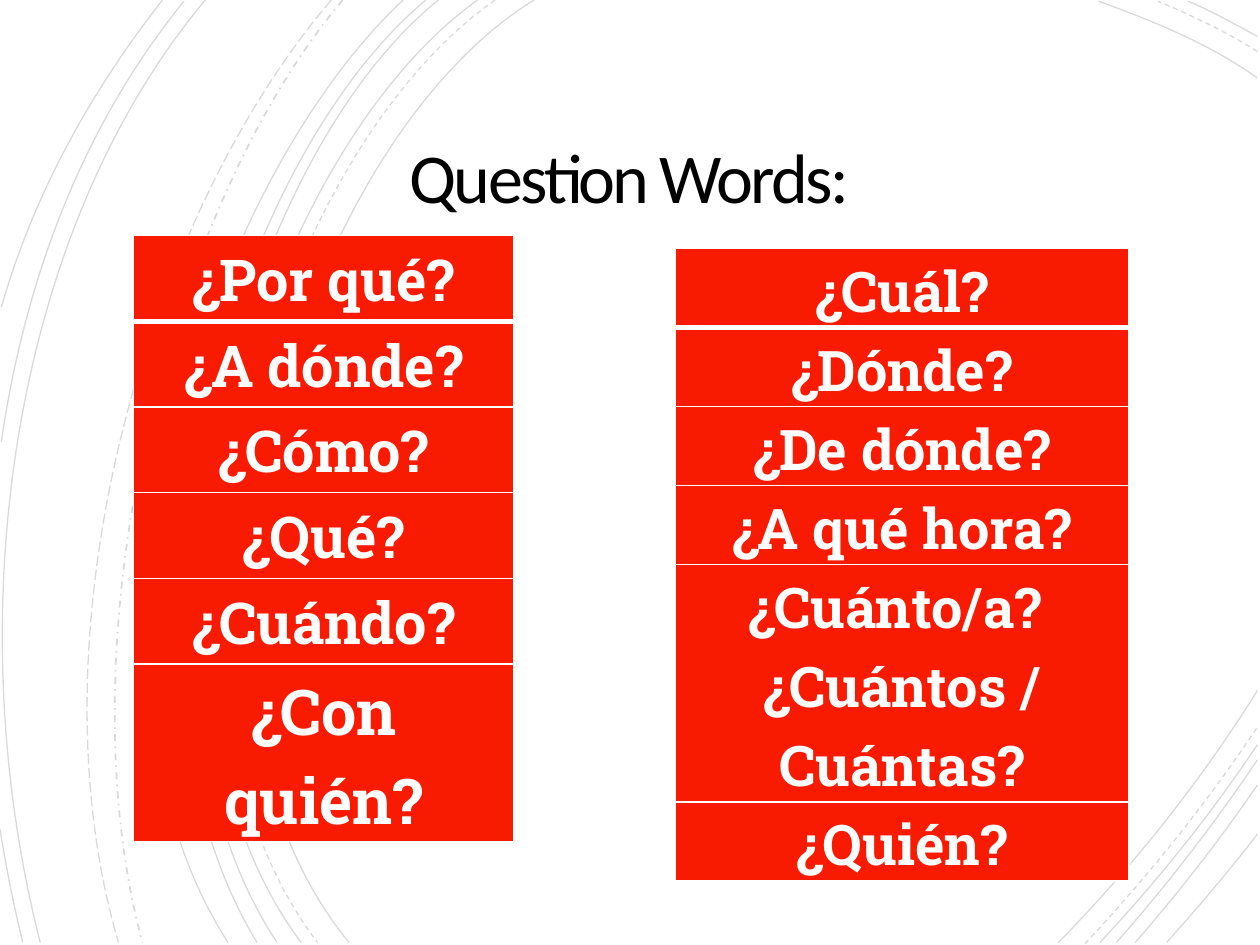
from dataclasses import dataclass

from lxml.etree import SubElement
from pptx import Presentation
from pptx.dml.color import RGBColor
from pptx.enum.dml import MSO_LINE
from pptx.enum.text import MSO_ANCHOR, MSO_AUTO_SIZE, PP_ALIGN
from pptx.oxml.ns import qn
from pptx.util import Inches, Pt


@dataclass(frozen=True)
class Theme:
    ink: RGBColor = RGBColor(0x00, 0x00, 0x00)
    paper: RGBColor = RGBColor(0xFF, 0xFF, 0xFF)
    red: RGBColor = RGBColor(0xF8, 0x1B, 0x02)
    title_font: str = "Calibri"
    word_font: str = "Roboto Slab"
    title_size: int = 40
    left_size: int = 33
    last_left_size: int = 36
    right_size: int = 32
    arc_opacity: int = 15


theme = Theme()


def draw_arc(slide, points, dash, weight):
    start, *rest = [(Inches(x), Inches(y)) for x, y in points]
    builder = slide.shapes.build_freeform(*start, scale=1.0)
    builder.add_line_segments(rest, close=False)
    arc = builder.convert_to_shape()
    arc.shadow.inherit = False
    arc.fill.background()
    arc.line.width = Pt(weight)
    arc.line.dash_style = dash
    arc.line.color.rgb = theme.ink
    ink = arc.line._ln.find(".//" + qn("a:srgbClr"))
    SubElement(ink, qn("a:alpha"), val=str(theme.arc_opacity * 1000))
    outline = next(arc._element.iter(qn("a:path")))
    curve = SubElement(outline, qn("a:cubicBezTo"))
    for segment in outline.findall(qn("a:lnTo")):
        curve.append(segment[0])
        outline.remove(segment)


def draw_borders(cell, first):
    sides = {"L": 1, "R": 1, "T": 1, "B": 3} if first else {"L": 1, "R": 1, "B": 1}
    properties = cell._tc.get_or_add_tcPr()
    for side, weight in sides.items():
        border = SubElement(properties, qn(f"a:ln{side}"), w=str(Pt(weight)))
        solid = SubElement(border, qn("a:solidFill"))
        SubElement(solid, qn("a:srgbClr"), val=str(theme.paper))


presentation = Presentation()
presentation.slide_width = Inches(10)
presentation.slide_height = Inches(7.5)
slide = presentation.slides.add_slide(presentation.slide_layouts[5])

arc_groups = [
    (MSO_LINE.SOLID, 0.75, [
        [(4.24, 0), (2.36, 1.15), (1.07, 5.4), (2.77, 7.48)],
        [(3.79, 0), (2.02, 1.27), (0.82, 5.37), (2.39, 7.48)],
        [(3.48, 0), (1.83, 1.33), (0.82, 5.41), (2.2, 7.48)],
        [(3.38, 0), (1.73, 1.38), (0.73, 5.33), (2.04, 7.48)],
        [(3.2, 0), (1.63, 1.47), (0.4, 5.29), (1.81, 7.48)],
        [(1.63, 0), (0.08, 1.85), (-0.34, 4.9), (0.32, 7.48)],
        [(1.46, 0.01), (0.69, 0.96), (0.21, 2.14), (0.01, 3.51)],
        [(1.29, 0), (0.75, 0.69), (0.28, 1.5), (0.01, 2.44)],
        [(0, 6.58), (0.05, 6.89), (0.11, 7.19), (0.18, 7.48)],
        [(9.98, 0.62), (9.59, 0.34), (9.13, 0.16), (8.72, 0.01)],
        [(9.98, 0.29), (9.8, 0.19), (9.62, 0.09), (9.43, 0.01)],
        [(8.4, 7.48), (8.97, 6.9), (9.52, 6.22), (9.98, 5.48)],
        [(8.73, 7.48), (9.17, 7.01), (9.6, 6.48), (9.98, 5.91)],
        [(8.86, 7.48), (9.25, 7.04), (9.63, 6.55), (9.98, 6.03)],
        [(9.01, 7.48), (9.35, 7.09), (9.68, 6.67), (9.98, 6.23)],
        [(9.26, 7.48), (9.5, 7.21), (9.75, 6.92), (9.98, 6.62)],
    ]),
    (MSO_LINE.DASH, 0.75, [
        [(3.93, 0), (2.13, 1.25), (0.92, 5.37), (2.52, 7.48)],
        [(9.98, 0.41), (9.73, 0.25), (9.45, 0.12), (9.19, 0.01)],
        [(8.61, 7.49), (9.09, 6.98), (9.56, 6.4), (9.98, 5.77)],
    ]),
    (MSO_LINE.DASH_DOT, 1, [[(2.72, 0), (1.32, 1.66), (0.49, 5.09), (1.13, 7.48)]]),
    (MSO_LINE.LONG_DASH, 0.75, [[(2.63, 0), (1.18, 1.69), (0.21, 4.99), (0.94, 7.48)]]),
]
for dash, weight, arcs in arc_groups:
    for points in arcs:
        draw_arc(slide, points, dash, weight)

title = slide.shapes.title
title.left, title.top = Inches(1.44), Inches(0.87)
title.width, title.height = Inches(7.11), Inches(1.15)
heading = title.text_frame
heading.text = "Question Words:"
heading.word_wrap = True
heading.auto_size = MSO_AUTO_SIZE.NONE
heading.vertical_anchor = MSO_ANCHOR.MIDDLE
heading.margin_left = heading.margin_right = Inches(0.25)
heading.margin_top = heading.margin_bottom = Inches(0.25)
heading_line = heading.paragraphs[0]
heading_line.alignment = PP_ALIGN.CENTER
heading_line.line_spacing = 0.85
heading_line.font.name = theme.title_font
heading_line.font.size = Pt(theme.title_size)
heading_line.font.color.rgb = theme.ink
heading_line.runs[0].font._element.set("spc", "-150")

left_words = [
    ("¿Por qué?", 0.68, theme.left_size),
    ("¿A dónde?", 0.68, theme.left_size),
    ("¿Cómo?", 0.68, theme.left_size),
    ("¿Qué?", 0.68, theme.left_size),
    ("¿Cuándo?", 0.68, theme.left_size),
    ("¿Con quién?", 0.68, theme.last_left_size),
]
right_words = [
    ("¿Cuál?", 0.45, theme.right_size),
    ("¿Dónde?", 0.45, theme.right_size),
    ("¿De dónde?", 0.45, theme.right_size),
    ("¿A qué hora?", 0.45, theme.right_size),
    ("¿Cuánto/a? \n¿Cuántos / Cuántas?", 0.92, theme.right_size),
    ("¿Quién?", 0.45, theme.right_size),
]
word_lists = [
    (left_words, (1.06, 1.87, 3.02, 4.65), 0.23),
    (right_words, (5.36, 1.97, 3.6, 4.4), 0.07),
]
for words, place, margin in word_lists:
    frame = slide.shapes.add_table(len(words), 1, *map(Inches, place))
    for index, (word, row_height, size) in enumerate(words):
        frame.table.rows[index].height = Inches(row_height)
        cell = frame.table.cell(index, 0)
        draw_borders(cell, index == 0)
        cell.fill.solid()
        cell.fill.fore_color.rgb = theme.red
        cell.margin_left = cell.margin_right = Inches(margin)
        cell.margin_top = cell.margin_bottom = 0
        cell.text_frame.text = word
        for line in cell.text_frame.paragraphs:
            line.alignment = PP_ALIGN.CENTER
            line.line_spacing = 1.07
            line.font.name = theme.word_font
            line.font.size = Pt(size)
            line.font.bold = True
            line.font.color.rgb = theme.paper
    frame.height = Inches(place[3])

presentation.save("out.pptx")
